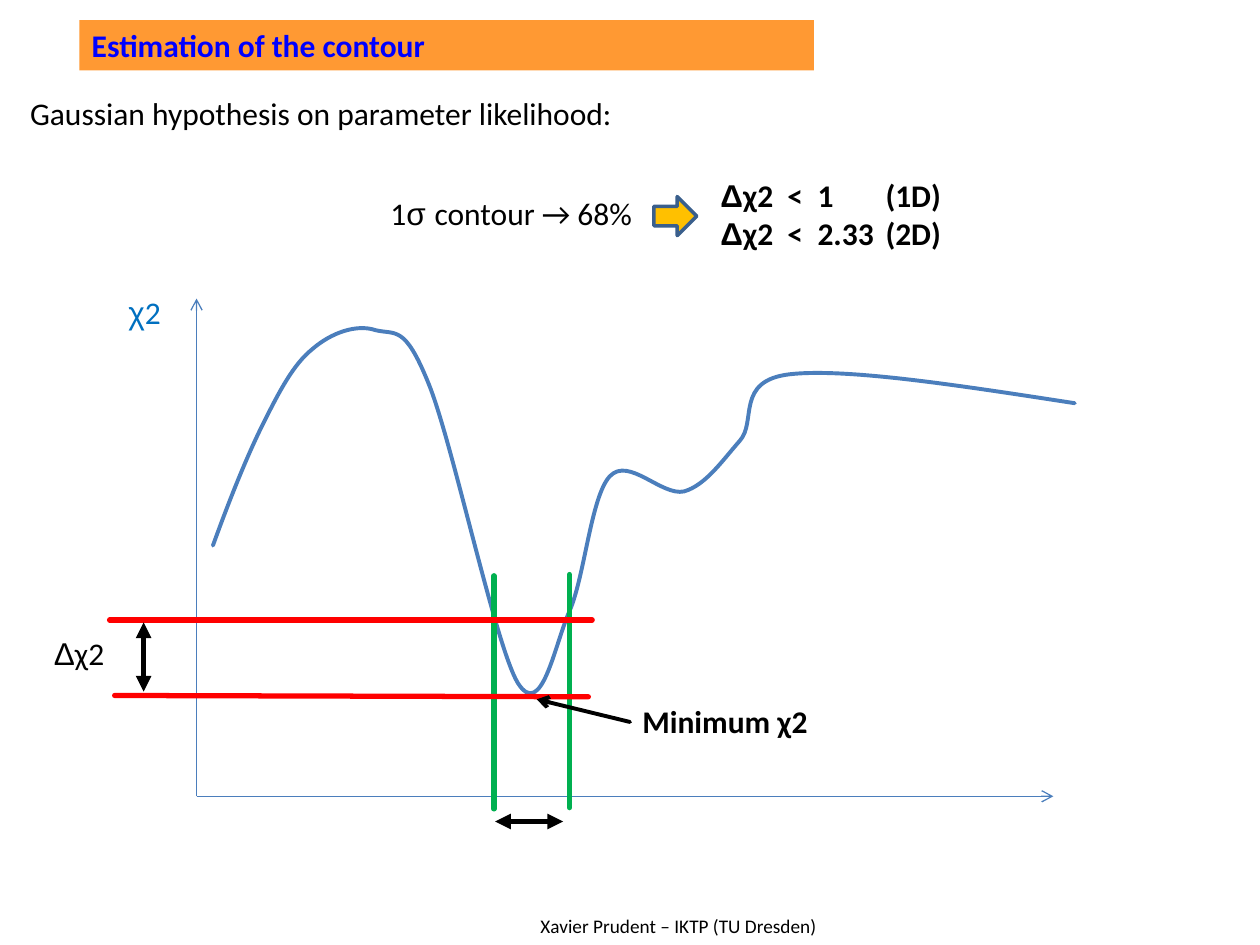
from lxml.etree import SubElement as Sub
from pptx import Presentation
from pptx.dml.color import RGBColor as Rgb
from pptx.enum.shapes import MSO_CONNECTOR as Conn, MSO_SHAPE as Kind
from pptx.enum.text import MSO_ANCHOR as Anchor, PP_ALIGN as Align
from pptx.oxml.ns import qn
from pptx.util import Inches as In, Pt

BLUE, BLACK, GREEN, RED = "4B7EBC", "000000", "00B050", "FF0000"
SANS, GREEK = "Calibri", "Arial"

ORIG = (1.56, 6.32)
AXES = [(1.56, 2.37), (8.36, 6.32)]
CURVE = [
    (1.69, 4.33),
    (1.82, 3.97), (1.96, 3.62), (2.09, 3.36),
    (2.22, 3.1), (2.33, 2.89), (2.48, 2.77),
    (2.63, 2.64), (2.83, 2.57), (2.98, 2.62),
    (3.14, 2.66), (3.21, 2.57), (3.4, 3.04),
    (3.59, 3.5), (3.93, 5.12), (4.11, 5.42),
    (4.3, 5.72), (4.4, 5.12), (4.52, 4.85),
    (4.64, 4.58), (4.69, 3.94), (4.84, 3.78),
    (4.99, 3.62), (5.25, 3.94), (5.43, 3.9),
    (5.6, 3.85), (5.73, 3.66), (5.87, 3.5),
    (6.01, 3.35), (5.83, 3.02), (6.27, 2.97),
    (6.72, 2.92), (7.62, 3.06), (8.53, 3.2),
]
BARS = [
    ((3.92, 4.57), (3.92, 6.42), GREEN),
    ((4.52, 4.56), (4.52, 6.41), GREEN),
    ((0.91, 5.52), (4.67, 5.53), RED),
    ((0.87, 4.92), (4.7, 4.92), RED),
]
SPANS = [((4.47, 6.52), (3.93, 6.52)), ((1.14, 4.94), (1.14, 5.49))]
STOPS = [0.53, 0.77, 1.31]
LIMITS = [
    [("Δ", GREEK), ("χ2\t<\t1\t(1D)", SANS)],
    [("Δ", GREEK), ("χ2\t<\t2.33\t(2D)", SANS)],
]
TEXTS = [
    ((0.92, 2.28, 1.87, 0.4), [[("χ", GREEK), ("2", SANS)]], {"hue": "0070C0"}),
    ((2.19, 7.21, 6.39, 0.29), [[("Xavier Prudent – IKTP (TU Dresden)", SANS)]],
     {"size": 11, "align": Align.CENTER}),
    ((0.33, 4.98, 0.66, 0.4), [[("Δ", GREEK), ("χ2", SANS)]], {}),
    ((0.14, 0.7, 7.78, 0.4),
     [[("Gaussian hypothesis on parameter likelihood:", SANS)]], {}),
    ((5.62, 1.35, 3.54, 0.71), LIMITS, {"bold": True, "stops": STOPS}),
    ((3, 1.49, 2.21, 0.4),
     [[("1", SANS), ("σ ", GREEK), ("contour → 68%", SANS)]], {"wrap": False}),
    ((5, 5.52, 2.83, 0.4), [[("Minimum χ2", SANS)]], {"bold": True}),
]


def color(code):
    return Rgb.from_string(code)


def write(shape, paras, hue=BLACK, size=18, bold=False, align=Align.LEFT,
          stops=(), wrap=True):
    frame = shape.text_frame
    frame.word_wrap = wrap
    for i, runs in enumerate(paras):
        para = frame.add_paragraph() if i else frame.paragraphs[0]
        para.alignment = align
        if stops:
            tabs = Sub(para._p.get_or_add_pPr(), qn("a:tabLst"))
            for x in stops:
                Sub(tabs, qn("a:tab"), pos=str(In(x)), algn="l")
        for text, face in runs:
            run = para.add_run()
            run.text = text
            font = run.font
            font.name, font.size, font.bold = face, Pt(size), bold
            font.color.rgb = color(hue)


def stroke(shape, hue, width, cap="flat"):
    shape.line.color.rgb = color(hue)
    shape.line.width = Pt(width)
    edge = shape.line._get_or_add_ln()
    edge.set("cap", cap)
    return edge


def link(start, end, hue, width, head=None, tail=None, cap="flat"):
    ends = [In(v) for v in start + end]
    line = shapes.add_connector(Conn.STRAIGHT, *ends)
    edge = stroke(line, hue, width, cap)
    for tag, tip in (("a:headEnd", head), ("a:tailEnd", tail)):
        if tip:
            Sub(edge, qn(tag), type=tip)
    Sub(line._element.spPr, qn("a:effectLst"))


def block(kind, box, fill):
    shape = shapes.add_shape(kind, *map(In, box))
    shape.shadow.inherit = False
    shape.fill.solid()
    shape.fill.fore_color.rgb = color(fill)
    return shape


def bend(points):
    first, *rest = [(In(x), In(y)) for x, y in points]
    form = shapes.build_freeform(*first)
    form.add_line_segments(rest, close=False)
    shape = form.convert_to_shape()
    shape.shadow.inherit = False
    shape.fill.background()
    stroke(shape, BLUE, 2.25, "rnd")
    track = next(shape._element.iter(qn("a:path")))
    legs = track.findall(qn("a:lnTo"))
    for i in range(0, len(legs), 3):
        cubic = Sub(track, qn("a:cubicBezTo"))
        for leg in legs[i:i + 3]:
            cubic.append(leg[0])
            track.remove(leg)


deck = Presentation()
deck.slide_width, deck.slide_height = In(10), In(7.5)
shapes = deck.slides.add_slide(deck.slide_layouts[6]).shapes

for tip in AXES:
    link(ORIG, tip, BLUE, 0.75, tail="arrow")
bend(CURVE)

title = block(Kind.RECTANGLE, (0.63, 0.16, 5.83, 0.4), "FF9933")
title.line.fill.background()
title.text_frame.vertical_anchor = Anchor.MIDDLE
write(title, [[("Estimation of the contour", SANS)]], "0000FF", bold=True)

for start, end, hue in BARS:
    link(start, end, hue, 3, cap="rnd")
for start, end in SPANS:
    link(start, end, BLACK, 3, "triangle", "triangle")
for box, paras, style in TEXTS:
    write(shapes.add_textbox(*map(In, box)), paras, **style)

stroke(block(Kind.RIGHT_ARROW, (5.19, 1.56, 0.34, 0.31), "FFC000"), "3A5F8C", 2)
link((5, 5.73), (4.26, 5.55), BLACK, 2.25, tail="arrow", cap="rnd")

deck.save("out.pptx")
